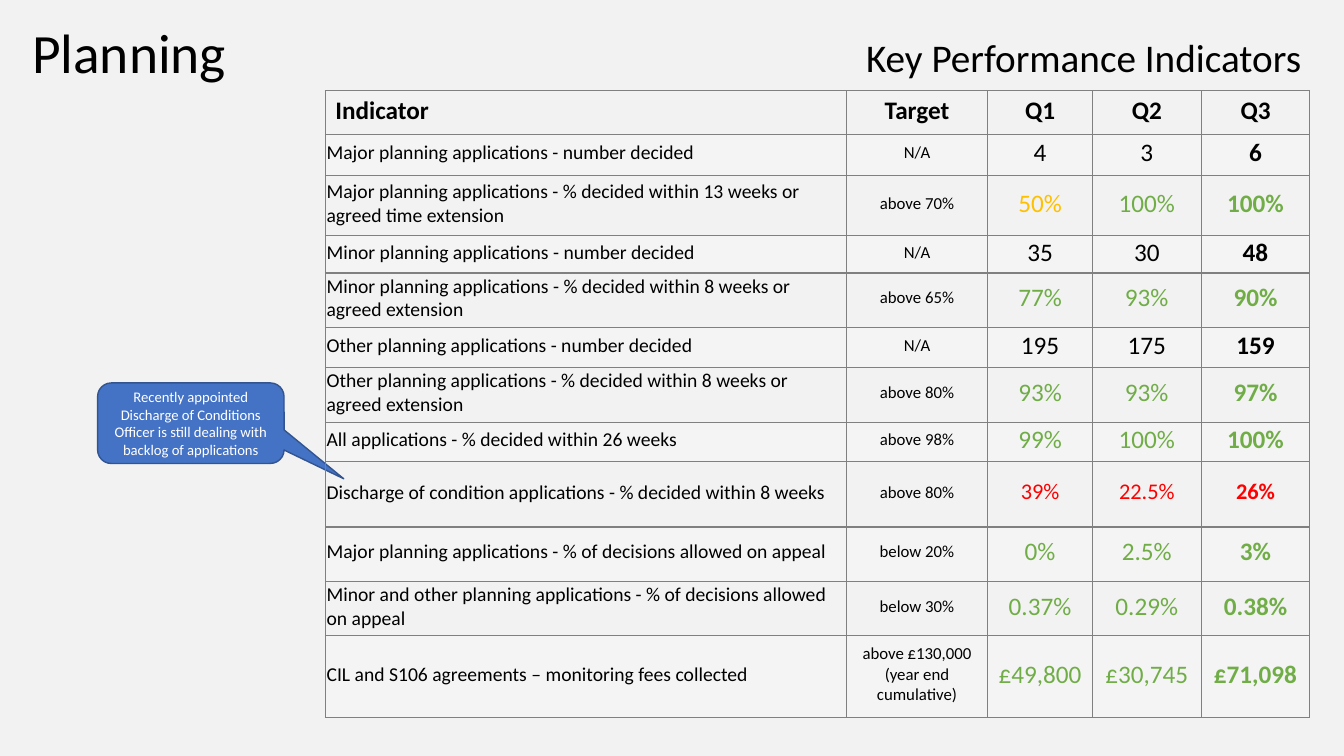
from lxml.etree import SubElement
from pptx import Presentation
from pptx.dml.color import RGBColor
from pptx.enum.shapes import MSO_SHAPE as Preset
from pptx.enum.text import MSO_ANCHOR as Anchor, PP_ALIGN as Align
from pptx.oxml.ns import qn
from pptx.util import Cm, Pt

FONT = "Calibri"
BLACK = RGBColor(0x00, 0x00, 0x00)
WHITE = RGBColor(0xFF, 0xFF, 0xFF)
PALE = RGBColor(0xF2, 0xF2, 0xF2)
GREY = RGBColor(0x80, 0x80, 0x80)
GREEN = RGBColor(0x70, 0xAD, 0x47)
AMBER = RGBColor(0xFF, 0xC0, 0x00)
RED = RGBColor(0xFF, 0x00, 0x00)
BLUE = RGBColor(0x44, 0x72, 0xC4)
NAVY = RGBColor(0x32, 0x54, 0x91)

COLUMN_WIDTHS = [13.13, 3.56, 2.64, 2.74, 2.74]
ROW_HEIGHTS = [1.09, 1.04, 1.52, 0.94, 1.37, 1.02, 1.37, 0.99, 1.65, 1.37, 1.37, 2.06]
HEADINGS = ["Indicator", "Target", "Q1", "Q2", "Q3"]
INDICATORS = [
    ("Major planning applications - number decided", "N/A", "4", "3", "6"),
    ("Major planning applications - % decided within 13 weeks or agreed time extension",
     "above 70%", "50%", "100%", "100%"),
    ("Minor planning applications - number decided", "N/A", "35", "30", "48"),
    ("Minor planning applications - % decided within 8 weeks or agreed extension",
     "above 65%", "77%", "93%", "90%"),
    ("Other planning applications - number decided", "N/A", "195", "175", "159"),
    ("Other planning applications - % decided within 8 weeks or agreed extension",
     "above 80%", "93%", "93%", "97%"),
    ("All applications - % decided within 26 weeks", "above 98%", "99%", "100%", "100%"),
    ("Discharge of condition applications - % decided within 8 weeks",
     "above 80%", "39%", "22.5%", "26%"),
    ("Major planning applications - % of decisions allowed on appeal",
     "below 20%", "0%", "2.5%", "3%"),
    ("Minor and other planning applications - % of decisions allowed on appeal",
     "below 30%", "0.37%", "0.29%", "0.38%"),
    ("CIL and S106 agreements – monitoring fees collected",
     "above £130,000 (year end cumulative)", "£49,800", "£30,745", "£71,098"),
]
MISSED_ROW = 8
AMBER_CELL = (2, 2)


def write(frame, text, size, color=BLACK, bold=False, align=Align.LEFT, spacing=None):
    """Write one formatted paragraph into a text frame."""
    frame.word_wrap = True
    para = frame.paragraphs[0]
    para.alignment = align
    if spacing:
        para.line_spacing = spacing
    span = para.add_run()
    span.text = text
    span.font.name = FONT
    span.font.size = Pt(size)
    span.font.bold = bold
    span.font.color.rgb = color


def add_heading(page, place, text, size, align):
    """Add a heading that stands on the bottom of its box."""
    box = page.shapes.add_textbox(*map(Cm, place))
    box.text_frame.vertical_anchor = Anchor.BOTTOM
    write(box.text_frame, text, size, align=align, spacing=0.9)


def add_callout(page, place, text):
    """Add the rounded speech callout that points at the missed target."""
    callout = page.shapes.add_shape(Preset.ROUNDED_RECTANGULAR_CALLOUT, *map(Cm, place))
    for index, value in enumerate((0.82, 0.69, 0.17)):
        callout.adjustments[index] = value
    callout.shadow.inherit = False
    callout.fill.solid()
    callout.fill.fore_color.rgb = BLUE
    callout.line.color.rgb = NAVY
    callout.line.width = Pt(1)
    callout.text_frame.vertical_anchor = Anchor.MIDDLE
    write(callout.text_frame, text, 10.5, WHITE, align=Align.CENTER)


def set_borders(cell):
    """Draw a thin grey line on the four sides of a cell."""
    properties = cell._tc.get_or_add_tcPr()
    for index, side in enumerate(("a:lnL", "a:lnR", "a:lnT", "a:lnB")):
        line = properties.makeelement(qn(side), {"w": str(Pt(1))})
        fill = SubElement(line, qn("a:solidFill"))
        SubElement(fill, qn("a:srgbClr"), val=str(GREY))
        properties.insert(index, line)


def set_fill(cell, tinted):
    """Give a cell a faint white tint or no fill."""
    if not tinted:
        cell.fill.background()
        return
    cell.fill.solid()
    cell.fill.fore_color.rgb = WHITE
    color = cell._tc.tcPr.find(f".//{qn('a:srgbClr')}")
    SubElement(color, qn("a:alpha"), val="20000")


def value_color(row, column, target):
    """Return the status colour of a quarterly value."""
    if target == "N/A":
        return BLACK
    if row == MISSED_ROW:
        return RED
    return AMBER if (row, column) == AMBER_CELL else GREEN


def cell_format(row, column, target):
    """Return the text format for a place in the table."""
    align = Align.CENTER if column else Align.LEFT
    if row == 0:
        return dict(size=18, bold=True, align=align)
    if column < 2:
        return dict(size=12 if column else 14, align=align)
    return dict(size=16 if row == MISSED_ROW else 18, bold=column == 4, align=align,
                color=value_color(row, column, target))


def add_indicator_table(page, place):
    """Add the table of indicators, targets and quarterly values."""
    records = [HEADINGS, *INDICATORS]
    table = page.shapes.add_table(len(records), len(HEADINGS), *map(Cm, place)).table
    table.first_row = table.horz_banding = False
    for column, width in zip(table.columns, COLUMN_WIDTHS):
        column.width = Cm(width)
    for row, height in zip(table.rows, ROW_HEIGHTS):
        row.height = Cm(height)
    for row, record in enumerate(records):
        for column, text in enumerate(record):
            cell = table.cell(row, column)
            if row:
                cell.vertical_anchor = Anchor.MIDDLE
                cell.margin_left = cell.margin_right = cell.margin_top = Cm(0.03)
                cell.margin_bottom = Cm(0.13)
            write(cell.text_frame, text, **cell_format(row, column, record[1]))
            set_fill(cell, row % 2 == 1)
            set_borders(cell)


def main():
    """Build the planning indicators slide."""
    deck = Presentation()
    deck.slide_width, deck.slide_height = Cm(33.87), Cm(19.05)
    page = deck.slides.add_slide(deck.slide_layouts[6])
    page.background.fill.solid()
    page.background.fill.fore_color.rgb = PALE
    add_callout(page, (2.46, 9.65, 4.7, 2.03),
                "Recently appointed Discharge of Conditions Officer is still dealing "
                "with backlog of applications")
    add_indicator_table(page, (8.2, 2.29, 24.84, 15.77))
    add_heading(page, (21.03, 0.41, 12.01, 1.75), "Key Performance Indicators", 28, Align.RIGHT)
    add_heading(page, (0.56, 1.14, 15.62, 1.14), "Planning", 39.6, Align.LEFT)
    deck.save("out.pptx")


if __name__ == "__main__":
    main()
